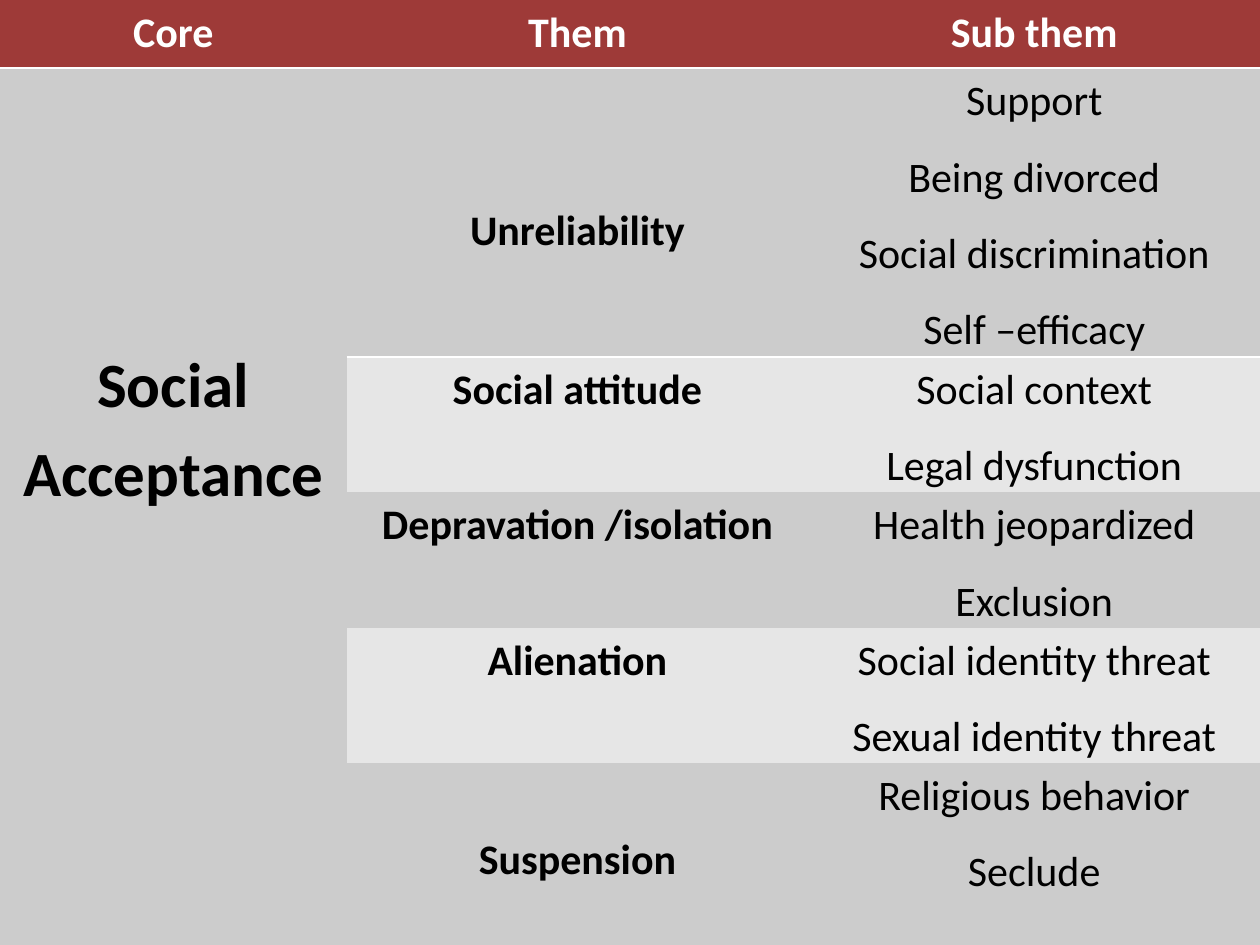
from lxml import etree
from pptx import Presentation
from pptx.dml.color import RGBColor
from pptx.enum.text import PP_ALIGN
from pptx.oxml.ns import qn
from pptx.util import Pt

CENTER = PP_ALIGN.CENTER
NO_GRID = "{2D5ABB26-0587-4C30-8999-92F81FD0307C}"
THEME = {
    "font": "Calibri", "size": 24, "core": 36,
    "head": "9E3A38", "dark": "CCCCCC", "light": "E6E6E6",
    "white": "FFFFFF", "black": "000000",
}
HEADS = ["Core", "Them", "Sub them"]
# theme, drop from the cell top in points, sub themes
ROWS = [
    ("Unreliability", 74.3, ["Support", "Being divorced",
                             "Social discrimination", "Self –efficacy"]),
    ("Social attitude", 0, ["Social context", "Legal dysfunction"]),
    ("Depravation /isolation", 0, ["Health jeopardized", "Exclusion"]),
    ("Alienation", 0, ["Social identity threat", "Sexual identity threat"]),
    ("Suspension", 36.6, ["Religious behavior", "Seclude"]),
]
CORE_DROP = 153
WIDTHS = [198, 264, 258]
HEIGHTS = [39, 165, 77.3, 77.3, 77.3, 112]


def write(cell, lines, fill, ink="black", size="size", bold=True, drop=0):
    """Fill a cell and set its lines as centred paragraphs."""
    inset = {"margin_left": 5, "margin_right": 5,
             "margin_top": drop, "margin_bottom": 0}
    for key, val in inset.items():
        setattr(cell, key, Pt(val))
    cell.fill.solid()
    cell.fill.fore_color.rgb = RGBColor.from_string(THEME[fill])
    cell.text = "\n".join(lines)
    look = {"name": THEME["font"], "size": Pt(THEME[size]), "bold": bold}
    flow = {"alignment": CENTER, "line_spacing": 1.15, "space_after": Pt(10)}
    for para in cell.text_frame.paragraphs:
        for key, val in flow.items():
            setattr(para, key, val)
        font = para.runs[0].font
        for key, val in look.items():
            setattr(font, key, val)
        font.color.rgb = RGBColor.from_string(THEME[ink])


def rule(cell, side):
    """Draw a white line on one side of a cell."""
    line = etree.Element(qn("a:" + side), w=str(Pt(1.5)))
    fill = etree.SubElement(line, qn("a:solidFill"))
    etree.SubElement(fill, qn("a:srgbClr"), val=THEME["white"])
    cell._tc.get_or_add_tcPr().insert(0, line)


prs = Presentation()
prs.slide_width, prs.slide_height = Pt(720), Pt(540)
slide = prs.slides.add_slide(prs.slide_layouts[6])
frame = slide.shapes.add_table(len(HEIGHTS), len(WIDTHS), 0, 0,
                               Pt(sum(WIDTHS)), Pt(sum(HEIGHTS)))
table = frame.table
table._tbl.tblPr.find(qn("a:tableStyleId")).text = NO_GRID
for col, width in zip(table.columns, WIDTHS):
    col.width = Pt(width)
for row, height in zip(table.rows, HEIGHTS):
    row.height = Pt(height)

for c, head in enumerate(HEADS):
    write(table.cell(0, c), [head], "head", ink="white")
    rule(table.cell(0, c), "lnB")
    rule(table.cell(1, c), "lnT")

core = table.cell(1, 0)
core.merge(table.cell(len(ROWS), 0))
write(core, ["Social Acceptance"], "dark", size="core", drop=CORE_DROP)

for r, (name, drop, subs) in enumerate(ROWS, 1):
    band = "dark" if r % 2 else "light"
    write(table.cell(r, 1), [name], band, drop=drop)
    write(table.cell(r, 2), subs, band, bold=False)

prs.save("out.pptx")
